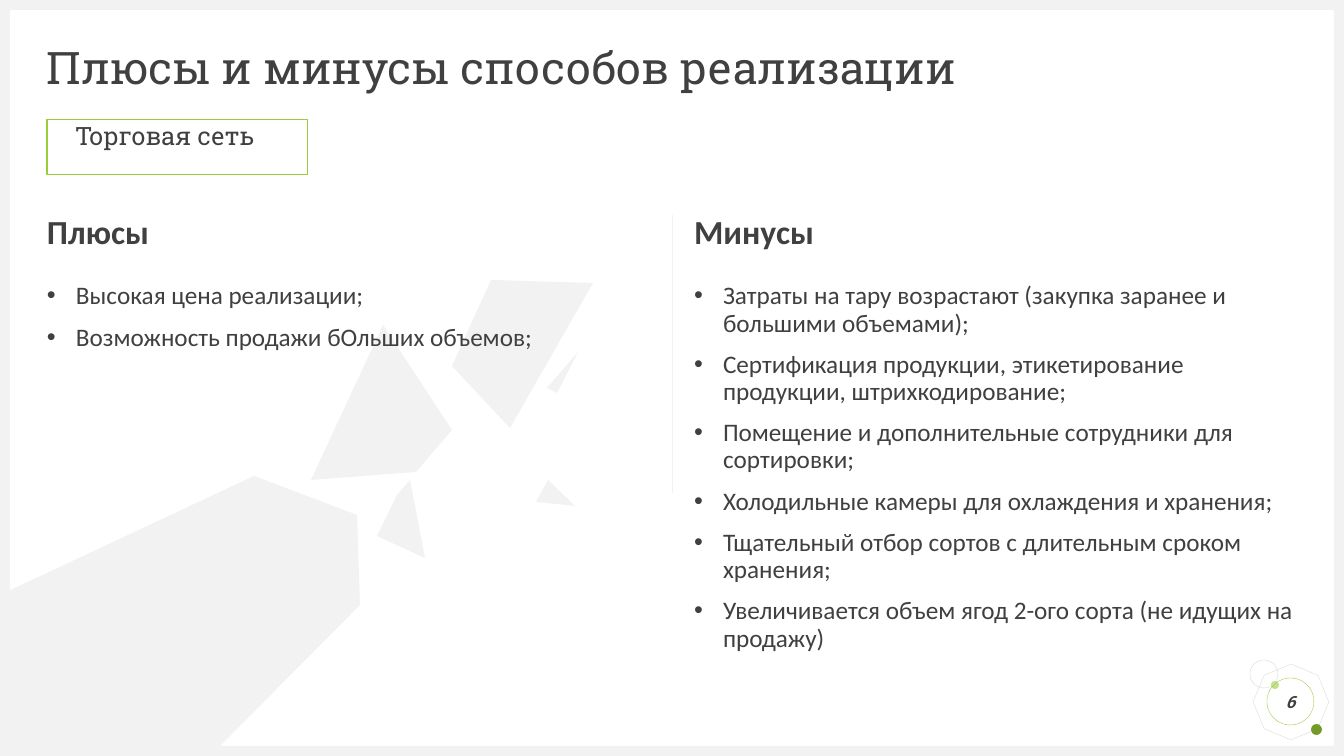
from lxml import etree
from pptx import Presentation
from pptx.dml.color import RGBColor
from pptx.enum.shapes import MSO_CONNECTOR, MSO_SHAPE
from pptx.enum.text import MSO_ANCHOR, PP_ALIGN
from pptx.oxml.ns import qn
from pptx.util import Pt

RECTANGLE, ELLIPSE, OCTAGON = MSO_SHAPE.RECTANGLE, MSO_SHAPE.OVAL, MSO_SHAPE.OCTAGON
STRAIGHT = MSO_CONNECTOR.STRAIGHT
TOP, MIDDLE = MSO_ANCHOR.TOP, MSO_ANCHOR.MIDDLE
CENTER = PP_ALIGN.CENTER

SLIDE_WIDTH, SLIDE_HEIGHT = 1344, 756
EMU_PER_PX = 12192000 / SLIDE_WIDTH
HEADING_FONT, BODY_FONT = "Roboto Slab", "Calibri"
DARK, PALE, GRAY, GREEN = "404040", "F2F2F2", "D9D9D9", "9ACB39"
LIGHT_GREEN, DEEP_GREEN = "C2E088", "749A29"

SHARDS = [
    [(548, 480), (575, 506), (536, 502)],
    [(410, 480), (425, 558), (377, 536), (397, 495)],
    [(254, 476), (357, 515), (360, 605), (210, 756), (15, 756), (0, 741), (0, 595)],
    [(578, 352), (557, 393), (547, 388)],
    [(383, 325), (452, 430), (416, 472), (311, 480)],
    [(491, 280), (593, 283), (510, 428), (452, 366)],
]
PROS = ["Высокая цена реализации;", "Возможность продажи бОльших объемов;"]
CONS = [
    "Затраты на тару возрастают (закупка заранее и большими объемами);",
    "Сертификация продукции, этикетирование продукции, штрихкодирование;",
    "Помещение и дополнительные сотрудники для сортировки;",
    "Холодильные камеры для охлаждения и хранения;",
    "Тщательный отбор сортов с длительным сроком хранения;",
    "Увеличивается объем ягод 2-ого сорта (не идущих на продажу)",
]


def px(length):
    return round(length * EMU_PER_PX)


def color(hex_value):
    return RGBColor.from_string(hex_value)


def paint(shape, fill=None, line=None, line_width=0.25):
    shape.shadow.inherit = False
    if fill:
        shape.fill.solid()
        shape.fill.fore_color.rgb = color(fill)
    else:
        shape.fill.background()
    if line:
        shape.line.color.rgb = color(line)
        shape.line.width = Pt(line_width)
    else:
        shape.line.fill.background()


def add_figure(slide, kind, box, **style):
    shape = slide.shapes.add_shape(kind, *map(px, box))
    paint(shape, **style)
    return shape


def write(shape, lines, size, font, bold=False, italic=False, anchor=TOP,
          before=10, spacing=0.9, inset=(0, 0)):
    frame = shape.text_frame
    frame.text = "\n".join(lines)
    frame.word_wrap = True
    frame.vertical_anchor = anchor
    frame.margin_left = frame.margin_right = px(inset[0])
    frame.margin_top = frame.margin_bottom = px(inset[1])
    for paragraph in frame.paragraphs:
        paragraph.line_spacing = spacing
        paragraph.space_before = Pt(before)
        for run in paragraph.runs:
            run.font.name = font
            run.font.size = Pt(size)
            run.font.bold = bold
            run.font.italic = italic
            run.font.color.rgb = color(DARK)


def add_text(slide, box, lines, size, font, **options):
    text_box = slide.shapes.add_textbox(*map(px, box))
    write(text_box, lines, size, font, **options)
    return text_box


def add_bullets(text_box, indent):
    for paragraph in text_box.text_frame.paragraphs:
        properties = paragraph._p.get_or_add_pPr()
        properties.set("marL", str(px(indent)))
        properties.set("indent", str(-px(indent)))
        etree.SubElement(properties, qn("a:buFont")).set("typeface", "Arial")
        etree.SubElement(properties, qn("a:buChar")).set("char", "•")


def add_badge_ornament(slide, left, top):
    octagon = add_figure(slide, OCTAGON, (left + 6, top + 7, 70, 70), line=GRAY)
    octagon.rotation = 22.7
    add_figure(slide, ELLIPSE, (left + 21, top + 21, 8, 8), fill=LIGHT_GREEN)
    add_figure(slide, ELLIPSE, (left + 61, top + 64, 11, 11), fill=DEEP_GREEN)
    add_figure(slide, ELLIPSE, (left, top, 28, 28), line=GRAY)


def add_page_number(slide, left, top, number):
    circle = add_figure(slide, ELLIPSE, (left + 17, top + 18, 47, 47), line=GREEN)
    write(circle, [number], 12, HEADING_FONT, bold=True, italic=True,
          anchor=MIDDLE, before=0, spacing=1.0)
    circle.text_frame.paragraphs[0].alignment = CENTER


def add_border(slide, width, height, thickness):
    for bar in [
        (0, height - thickness, width, thickness),
        (0, 0, width, thickness),
        (0, 0, thickness, height),
        (width - thickness, 0, thickness, height),
    ]:
        add_figure(slide, RECTANGLE, bar, fill=PALE)


def add_shards(slide):
    builder = slide.shapes.build_freeform(*SHARDS[0][0], scale=EMU_PER_PX)
    builder.add_line_segments(SHARDS[0][1:])
    for shard in SHARDS[1:]:
        builder.move_to(*shard[0])
        builder.add_line_segments(shard[1:])
    paint(builder.convert_to_shape(), fill=PALE)


def add_column(slide, left, top, width, heading, items):
    add_text(slide, (left, top, width, 39), [heading], 24, BODY_FONT, bold=True)
    bullets = add_text(slide, (left, top + 68, width, 345), items, 18, BODY_FONT)
    add_bullets(bullets, 29)


def add_divider(slide, left, top, height):
    divider = slide.shapes.add_connector(
        STRAIGHT, px(left), px(top), px(left), px(top + height))
    divider.line.color.rgb = color(PALE)
    divider.line.width = Pt(0.5)
    etree.SubElement(divider._element.spPr, qn("a:effectLst"))


def add_tag(slide, left, top, label):
    add_figure(slide, RECTANGLE, (left, top, 261, 55), line=GREEN, line_width=0.75)
    add_text(slide, (left + 18, top - 1, 318, 72), [label], 18, HEADING_FONT,
             inset=(10, 5))


def add_comparison_slide(presentation):
    slide = presentation.slides.add_slide(presentation.slide_layouts[6])
    slide.background.fill.solid()
    slide.background.fill.fore_color.rgb = color("FFFFFF")
    margin, column_top, column_width = 47, 215, 603
    badge = (1250, 660)
    add_badge_ornament(slide, *badge)
    add_border(slide, SLIDE_WIDTH, SLIDE_HEIGHT, 10)
    add_shards(slide)
    add_text(slide, (margin, 47, SLIDE_WIDTH - 2 * margin, 47),
             ["Плюсы и минусы способов реализации"], 32, HEADING_FONT,
             anchor=MIDDLE, before=0)
    add_column(slide, margin, column_top, column_width, "Плюсы", PROS)
    add_divider(slide, SLIDE_WIDTH // 2, column_top, 278)
    add_column(slide, SLIDE_WIDTH - margin - column_width, column_top,
               column_width, "Минусы", CONS)
    add_page_number(slide, *badge, "6")
    add_tag(slide, margin, 120, "Торговая сеть")


def main():
    presentation = Presentation()
    presentation.slide_width = px(SLIDE_WIDTH)
    presentation.slide_height = px(SLIDE_HEIGHT)
    add_comparison_slide(presentation)
    presentation.save("out.pptx")


if __name__ == "__main__":
    main()
